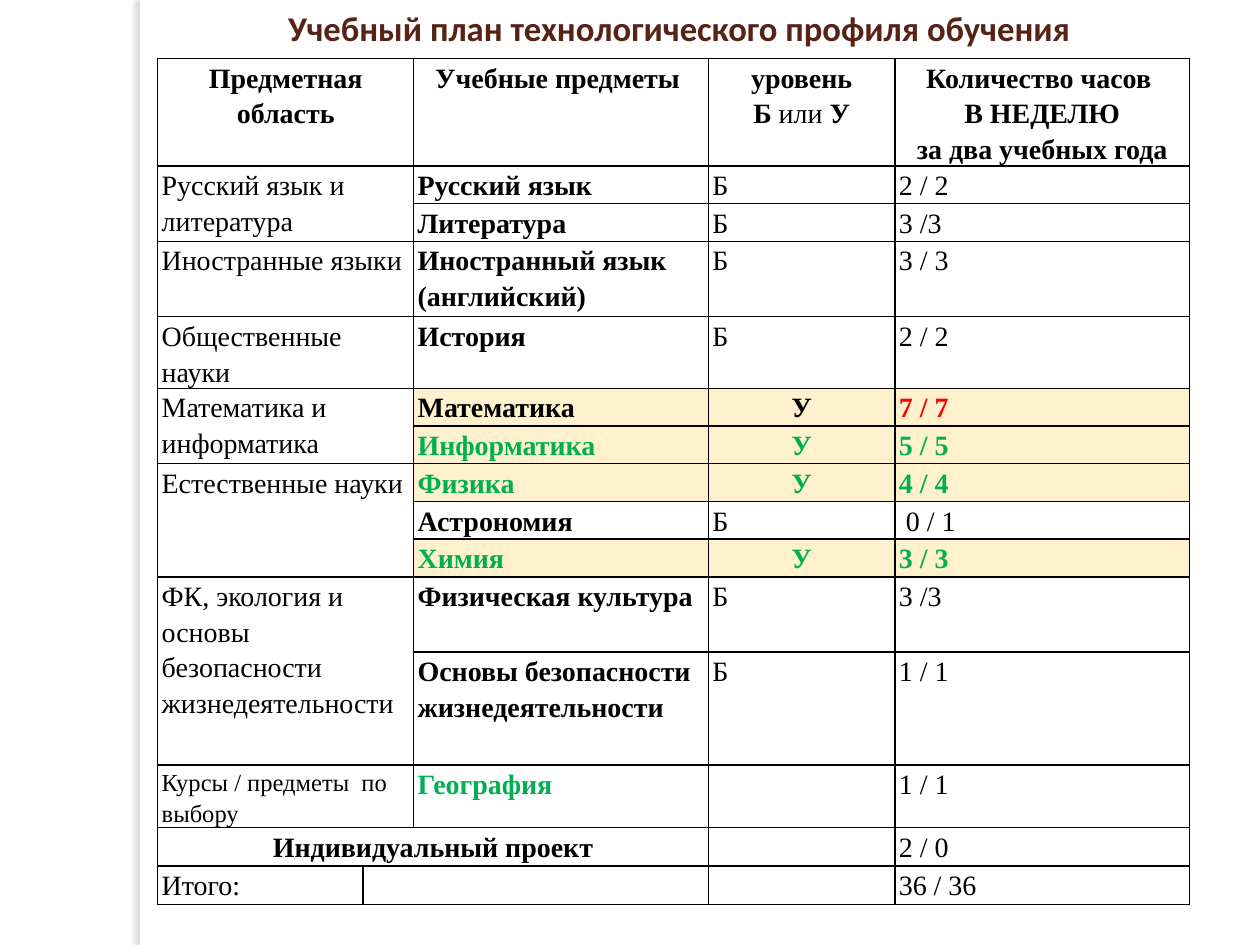
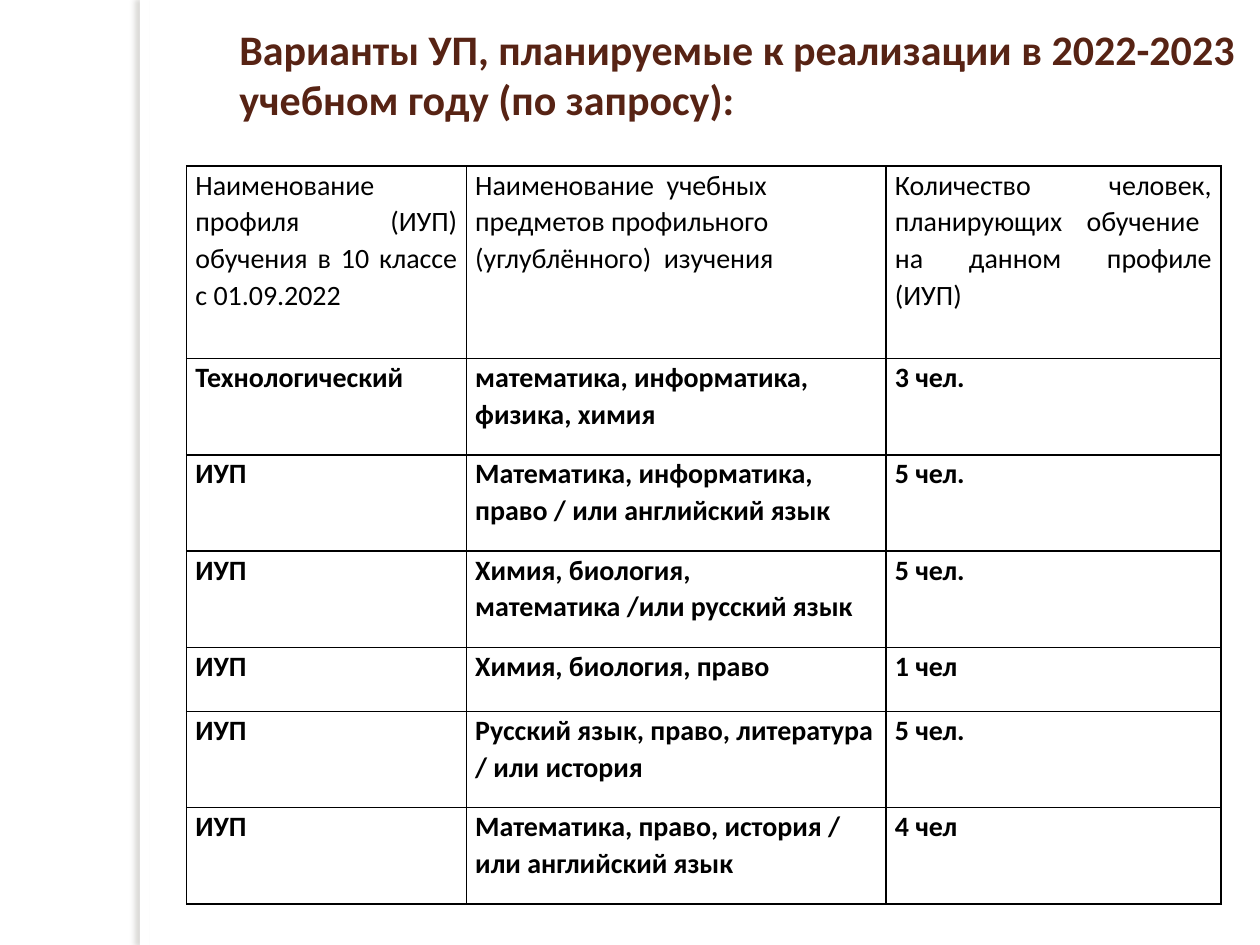
"""Builds two slides with the study plan of the technology profile."""
from lxml import etree
from pptx import Presentation
from pptx.dml.color import RGBColor
from pptx.enum.shapes import MSO_SHAPE as Shape
from pptx.enum.text import MSO_ANCHOR as Anchor, MSO_AUTO_SIZE as Fit, PP_ALIGN as Align
from pptx.oxml import parse_xml
from pptx.oxml.ns import nsdecls, qn
from pptx.util import Cm, Pt

BLACK = RGBColor(0x00, 0x00, 0x00)
WHITE = RGBColor(0xFF, 0xFF, 0xFF)
BROWN = RGBColor(0x57, 0x23, 0x14)
GREY = RGBColor(0x73, 0x6F, 0x63)
CREAM = RGBColor(0xFF, 0xF1, 0xCE)
GREEN = RGBColor(0x00, 0xB0, 0x50)
RED = RGBColor(0xFF, 0x00, 0x00)
SANS, SERIF = "Calibri", "Times New Roman"
WIDE, HIGH = 25.4, 19.05

PLAN = [
    ("Русский язык и литература", [("Русский язык", "Б", "2 / 2"), ("Литература", "Б", "3 /3")]),
    ("Иностранные языки", [("Иностранный язык\n(английский)", "Б", "3 / 3")]),
    ("Общественные науки", [("История", "Б", "2 / 2")]),
    ("Математика и информатика", [("Математика", "У", "7 / 7"), ("Информатика", "У", "5 / 5")]),
    ("Естественные науки", [("Физика", "У", "4 / 4"), ("Астрономия", "Б", " 0 / 1"),
                            ("Химия", "У", "3 / 3")]),
    ("ФК, экология и основы безопасности жизнедеятельности",
     [("Физическая культура", "Б", "3 /3"),
      ("Основы безопасности жизнедеятельности", "Б", "1 / 1")]),
    ("Курсы / предметы  по выбору", [("География", "", "1 / 1")]),
]
CHOSEN = {"Информатика", "Физика", "Химия", "География"}

HEADS = [
    "Наименование профиля (ИУП) обучения в 10 классе с 01.09.2022 ",
    "Наименование  учебных \nпредметов профильного\n(углублённого)  изучения",
    "Количество   человек, планирующих  обучение  на  данном  профиле (ИУП)",
]
CASES = [
    ("Технологический", "математика, информатика, физика, химия", "3 чел."),
    ("ИУП", "Математика, информатика, право / или английский язык", "5 чел."),
    ("ИУП", "Химия, биология,\nматематика /или русский язык", "5 чел."),
    ("ИУП", "Химия, биология, право", "1 чел"),
    ("ИУП", "Русский язык, право, литература / или история", "5 чел."),
    ("ИУП", "Математика, право, история / или английский язык", "4 чел"),
]


class Deck:
    """Holds the style and the current slide."""

    def __init__(self):
        self.file = Presentation()
        self.file.slide_width, self.file.slide_height = Cm(WIDE), Cm(HIGH)

    def start(self, text, box, size, align):
        """Adds a slide with its title and side band."""
        self.slide = self.file.slides.add_slide(self.file.slide_layouts[5])
        title = self.slide.shapes.title
        title.left, title.top, title.width, title.height = map(Cm, box)
        frame = title.text_frame
        frame.text = text
        frame.auto_size = Fit.NONE
        frame.vertical_anchor = Anchor.MIDDLE
        self.style(frame.paragraphs[0], SANS, size, BROWN, True, align)
        title.element.addprevious(self.band().element)

    def band(self):
        """Draws the white band with a shadow to its left."""
        band = self.slide.shapes.add_shape(Shape.RECTANGLE, Cm(2.82), 0, Cm(0.2), Cm(HIGH))
        band.fill.solid()
        band.fill.fore_color.rgb = WHITE
        band.line.fill.background()
        band.shadow.inherit = False
        glow = band.element.spPr.find(qn("a:effectLst"))
        glow.append(parse_xml(
            f'<a:outerShdw {nsdecls("a")} blurRad="{Pt(3)}" dist="{Pt(3)}" dir="10800000" '
            f'algn="tl" rotWithShape="0"><a:srgbClr val="{GREY}"><a:alpha val="25000"/>'
            '</a:srgbClr></a:outerShdw>'))
        return band

    def style(self, par, face, size, color, bold, align):
        """Formats one paragraph."""
        par.alignment = align
        font = par.font
        font.name, font.size, font.bold = face, Pt(size), bold
        font.color.rgb = color

    def grid(self, left, top, cols, rows, face, space, inset):
        """Adds a plain table with thin black borders."""
        self.face, self.space = face, space
        self.table = self.slide.shapes.add_table(
            len(rows), len(cols), Cm(left), Cm(top), Cm(sum(cols)), Cm(sum(rows))).table
        self.table.first_row = self.table.horz_banding = False
        for col, width in zip(self.table.columns, cols):
            col.width = Cm(width)
        for row, height in zip(self.table.rows, rows):
            row.height = Cm(height)
        for cell in self.table.iter_cells():
            cell.margin_left = cell.margin_right = Cm(inset)
            cell.margin_top = cell.margin_bottom = 0
            cell.fill.background()
            self.frame(cell)

    def frame(self, cell):
        """Draws the four borders of a cell."""
        props = cell._tc.get_or_add_tcPr()
        for spot, side in enumerate("LRTB"):
            line = etree.Element(qn(f"a:ln{side}"), w=str(Pt(1)))
            fill = etree.SubElement(line, qn("a:solidFill"))
            etree.SubElement(fill, qn("a:srgbClr"), val=str(BLACK))
            props.insert(spot, line)

    def join(self, row, col, down, across):
        """Merges a block of cells."""
        self.table.cell(row, col).merge(self.table.cell(row + down - 1, col + across - 1))

    def put(self, row, col, text, bold=False, align=Align.LEFT, color=BLACK, size=16, fill=None):
        """Fills one cell and returns its paragraphs."""
        cell = self.table.cell(row, col)
        cell.text = text
        if fill:
            cell.fill.solid()
            cell.fill.fore_color.rgb = fill
        pars = cell.text_frame.paragraphs
        for par in pars:
            self.style(par, self.face, size, color, bold, align)
            if text:
                par.line_spacing = self.space
        return pars


def plan(deck):
    """Builds the weekly plan."""
    deck.start("Учебный план технологического профиля обучения",
               (1.98, 0.05, 23.42, 1), 19.8, Align.CENTER)
    rows = [2.16, 0.76, 0.76, 1.52, 1.44] + [0.76] * 5 + [1.52, 2.28, 1.24, 0.76, 0.76]
    deck.grid(3.18, 1.18, [4.14, 1.02, 5.94, 3.76, 5.94], rows, SERIF, 1.15, 0.08)
    deck.join(0, 0, 1, 2)
    heads = {0: "Предметная область", 2: "Учебные предметы ", 3: "уровень\n",
             4: "Количество часов \nВ НЕДЕЛЮ\nза два учебных года"}
    for col, text in heads.items():
        pars = deck.put(0, col, text, True, Align.CENTER)
        if col == 3:
            for part in ("Б ", "или", " У"):
                run = pars[1].add_run()
                run.text = part
                run.font.bold = part != "или"
    row = 1
    for area, items in PLAN:
        deck.join(row, 0, len(items), 2)
        deck.put(row, 0, area, size=14 if area.startswith("Курсы") else 16)
        for name, level, hours in items:
            deep = level == "У"
            fill = CREAM if deep else None
            color = GREEN if name in CHOSEN else BLACK
            mark = color if deep else BLACK
            deck.put(row, 2, name, True, color=color, fill=fill)
            deck.put(row, 3, level, deep, Align.CENTER if deep else Align.LEFT, mark, fill=fill)
            deck.put(row, 4, hours, deep, color=RED if name == "Математика" else mark, fill=fill)
            row += 1
    deck.join(row, 0, 1, 3)
    deck.put(row, 0, "Индивидуальный проект", True, Align.CENTER)
    deck.put(row, 4, "2 / 0")
    deck.join(row + 1, 1, 1, 2)
    deck.put(row + 1, 0, "Итого:")
    deck.put(row + 1, 4, "36 / 36")


def cases(deck):
    """Builds the list of requested profiles."""
    deck.start("Варианты УП, планируемые к реализации в 2022-2023 учебном году (по запросу):",
               (4.57, 0, 20.83, 2.97), 24, Align.LEFT)
    rows = [3.88] + [1.94] * 3 + [1.29] + [1.94] * 2
    deck.grid(3.76, 3.35, [5.64, 8.46, 6.75], rows, SANS, 1.07, 0.18)
    for row, texts in enumerate([HEADS] + CASES):
        for col, text in enumerate(texts):
            left = row > 0 and col == 1
            deck.put(row, col, text, row > 0, Align.LEFT if left else Align.JUSTIFY)


def main():
    """Builds and saves the deck."""
    deck = Deck()
    plan(deck)
    cases(deck)
    deck.file.save("out.pptx")


if __name__ == "__main__":
    main()
